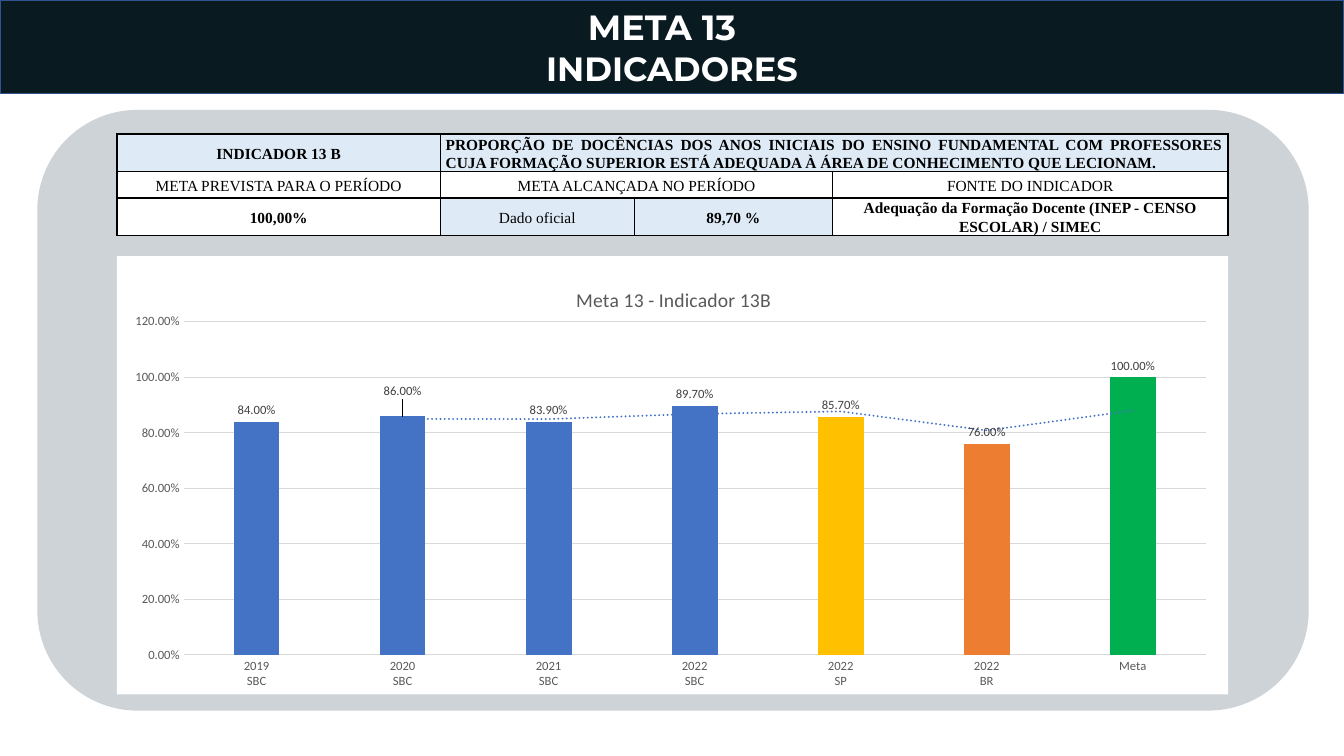
"""Build the slide with the results of indicator 13 B."""
from lxml import etree
from pptx import Presentation
from pptx.chart.data import CategoryChartData
from pptx.dml.color import RGBColor
from pptx.enum.chart import XL_CHART_TYPE as ChartType, XL_LABEL_POSITION as LabelPosition
from pptx.enum.chart import XL_TICK_MARK as TickMark
from pptx.enum.shapes import MSO_SHAPE as Shape
from pptx.enum.text import MSO_ANCHOR as Anchor, MSO_AUTO_SIZE as AutoSize, PP_ALIGN as Align
from pptx.oxml import parse_xml
from pptx.oxml.ns import nsdecls, qn
from pptx.util import Inches, Pt

TITLE_LINES = [("META 13  ", 25), ("INDICADORES", 24)]
WHITE, PALE_BLUE, GREY = "FFFFFF", "DEEBF7", "D9D9D9"
COLUMN_WIDTHS = [3.21, 1.92, 1.97, 3.92]
ROW_HEIGHTS = [0.37, 0.26, 0.37]
# row, column, columns spanned, fill, bold, text
CELLS = [
    (0, 0, 1, PALE_BLUE, True, "INDICADOR 13 B"),
    (0, 1, 3, PALE_BLUE, True,
     "PROPORÇÃO DE DOCÊNCIAS DOS ANOS INICIAIS DO ENSINO FUNDAMENTAL COM PROFESSORES "
     "CUJA FORMAÇÃO SUPERIOR ESTÁ ADEQUADA À ÁREA DE CONHECIMENTO QUE LECIONAM."),
    (1, 0, 1, WHITE, False, "META PREVISTA PARA O PERÍODO"),
    (1, 1, 2, WHITE, False, "META ALCANÇADA NO PERÍODO"),
    (1, 3, 1, WHITE, False, "FONTE DO INDICADOR"),
    (2, 0, 1, WHITE, True, "100,00%"),
    (2, 1, 1, PALE_BLUE, False, "Dado oficial"),
    (2, 2, 1, PALE_BLUE, True, "89,70 %"),
    (2, 3, 1, WHITE, True, "Adequação da Formação Docente (INEP - CENSO ESCOLAR) / SIMEC"),
]
CHART_TITLE = "Meta 13 - Indicador 13B"
BLUE = "4472C4"
RESULTS = [
    ("2019\nSBC", 0.84, BLUE), ("2020\nSBC", 0.86, BLUE), ("2021\nSBC", 0.839, BLUE),
    ("2022\nSBC", 0.897, BLUE), ("2022\nSP", 0.857, "FFC000"),
    ("2022\nBR", 0.76, "ED7D31"), ("Meta", 1, "00B050"),
]
RAISED_LABEL = 1
PERCENT = "0.00%"
LEFT, WIDTH = Inches(1.16), Inches(11.02)


def paint(target, color):
    target.fill.solid()
    target.fill.fore_color.rgb = RGBColor.from_string(color)


def set_font(font, name, size, color, bold=False):
    font.name, font.size, font.bold = name, Pt(size), bold
    font.color.rgb = RGBColor.from_string(color)


def manual_layout(target="", **places):
    modes = "".join(f'<c:{axis}Mode val="edge"/>' for axis in "xy") if target != "label" else ""
    inner = '<c:layoutTarget val="inner"/>' if target == "plot" else ""
    sizes = "".join(f'<c:{name} val="{value}"/>' for name, value in places.items())
    return parse_xml(f'<c:layout {nsdecls("c")}><c:manualLayout>{inner}{modes}{sizes}'
                     '</c:manualLayout></c:layout>')


def replace_layout(parent, layout, after=None):
    for old in parent.findall(qn("c:layout")):
        parent.remove(old)
    if after is None:
        parent.insert(0, layout)
    else:
        after.addnext(layout)


def add_title(page):
    title = page.shapes.title
    title.left, title.top, title.width, title.height = 0, 0, Inches(13.33), Inches(0.93)
    paint(title, "0A1A21")
    title.line.color.rgb = RGBColor.from_string("325491")
    title.line.width = Pt(1)
    frame = title.text_frame
    frame.auto_size, frame.vertical_anchor = AutoSize.NONE, Anchor.MIDDLE
    frame.text = "\n".join(text for text, size in TITLE_LINES)
    for para, (text, size) in zip(frame.paragraphs, TITLE_LINES):
        para.alignment = Align.CENTER
        set_font(para.font, "Montserrat", size, WHITE, True)


def add_panel(page):
    panel = page.shapes.add_shape(
        Shape.ROUNDED_RECTANGLE, Inches(0.37), Inches(1.09), Inches(12.61), Inches(5.96))
    panel.shadow.inherit = False
    paint(panel, "CED3D8")
    panel.line.fill.background()


def add_borders(cell):
    properties = cell._tc.get_or_add_tcPr()
    for side in ("lnL", "lnR", "lnT", "lnB"):
        line = etree.SubElement(properties, qn(f"a:{side}"), w=str(Pt(1)))
        fill = etree.SubElement(line, qn("a:solidFill"))
        etree.SubElement(fill, qn("a:srgbClr"), val="000000")


def add_indicator_table(page):
    table = page.shapes.add_table(
        len(ROW_HEIGHTS), len(COLUMN_WIDTHS), LEFT, Inches(1.33), WIDTH,
        Inches(sum(ROW_HEIGHTS))).table
    table.first_row = table.horz_banding = False
    for column, width in zip(table.columns, COLUMN_WIDTHS):
        column.width = Inches(width)
    for row, height in zip(table.rows, ROW_HEIGHTS):
        row.height = Inches(height)
    for cell in table.iter_cells():
        add_borders(cell)
        cell.margin_left = cell.margin_right = Inches(0.05)
        cell.margin_top, cell.margin_bottom = Inches(0.01), 0
        cell.vertical_anchor = Anchor.MIDDLE
    for row, column, span, fill, bold, text in CELLS:
        cell = table.cell(row, column)
        if span > 1:
            cell.merge(table.cell(row, column + span - 1))
        paint(cell, fill)
        cell.text = text
        para = cell.text_frame.paragraphs[0]
        para.alignment = Align.JUSTIFY if span == 3 else Align.CENTER
        para.line_spacing = 1.07
        set_font(para.font, "Times New Roman", 11, "000000", bold)


def format_axes(chart):
    values, categories = chart.value_axis, chart.category_axis
    for axis in (values, categories):
        axis.major_tick_mark = axis.minor_tick_mark = TickMark.NONE
        set_font(axis.tick_labels.font, "Calibri", 9, "595959")
    values.minimum_scale, values.maximum_scale, values.major_unit = 0, 1.2, 0.2
    values.tick_labels.number_format = PERCENT
    values.tick_labels.number_format_is_linked = False
    values.format.line.fill.background()
    for line in (values.major_gridlines.format.line, categories.format.line):
        line.color.rgb = RGBColor.from_string(GREY)
        line.width = Pt(0.75)


def format_labels(series):
    labels = series.data_labels
    labels.show_value = True
    labels.number_format, labels.number_format_is_linked = PERCENT, False
    raised = series.points[RAISED_LABEL].data_label
    for label in (labels, raised):
        label.position = LabelPosition.OUTSIDE_END
        set_font(label.font, "Calibri", 9, "404040")
    index = series._element.find(".//" + qn("c:dLbl")).find(qn("c:idx"))
    index.addnext(parse_xml(
        f'<c:numFmt {nsdecls("c")} formatCode="{PERCENT}" sourceLinked="0"/>'))
    replace_layout(index.getparent(), manual_layout("label", x=0, y=-0.03), index)


def add_moving_average(series):
    trend = parse_xml(
        f'<c:trendline {nsdecls("c", "a")}><c:spPr><a:ln w="{Pt(1.5)}" cap="rnd"><a:solidFill>'
        f'<a:srgbClr val="{BLUE}"/></a:solidFill><a:prstDash val="sysDot"/></a:ln></c:spPr>'
        '<c:trendlineType val="movingAvg"/><c:period val="2"/>'
        '<c:dispRSqr val="0"/><c:dispEq val="0"/></c:trendline>')
    series._element.find(qn("c:cat")).addprevious(trend)


def add_results_chart(page):
    data = CategoryChartData(number_format=PERCENT)
    data.categories = [name for name, value, color in RESULTS]
    data.add_series("Series 1", [value for name, value, color in RESULTS])
    chart = page.shapes.add_chart(
        ChartType.COLUMN_CLUSTERED, LEFT, Inches(2.54), WIDTH, Inches(4.35), data).chart
    set_font(chart.font, "Calibri", 10, "000000")
    chart.has_legend = False
    chart.has_title = True
    chart.chart_title.text_frame.text = CHART_TITLE
    set_font(chart.chart_title.text_frame.paragraphs[0].font, "Calibri", 14, "595959")
    format_axes(chart)
    plot = chart.plots[0]
    plot.vary_by_categories, plot.gap_width, plot.overlap = False, 219, -27
    series = plot.series[0]
    paint(series.format, BLUE)
    for index, (name, value, color) in enumerate(RESULTS):
        if color != BLUE:
            paint(series.points[index].format, color)
    format_labels(series)
    add_moving_average(series)
    space = chart._chartSpace
    title = space.find(".//" + qn("c:title"))
    replace_layout(title, manual_layout(x=0.41, y=0.06), title.find(qn("c:tx")))
    replace_layout(space.find(".//" + qn("c:plotArea")),
                   manual_layout("plot", x=0.06, y=0.15, w=0.92, h=0.76))
    space.find(qn("c:chart")).addnext(parse_xml(
        f'<c:spPr {nsdecls("c", "a")}><a:solidFill><a:srgbClr val="{WHITE}"/></a:solidFill>'
        '<a:ln><a:noFill/></a:ln></c:spPr>'))


def main():
    deck = Presentation()
    deck.slide_width, deck.slide_height = Inches(13.33), Inches(7.5)
    page = deck.slides.add_slide(deck.slide_layouts[5])
    add_title(page)
    add_panel(page)
    add_indicator_table(page)
    add_results_chart(page)
    deck.save("out.pptx")


if __name__ == "__main__":
    main()
